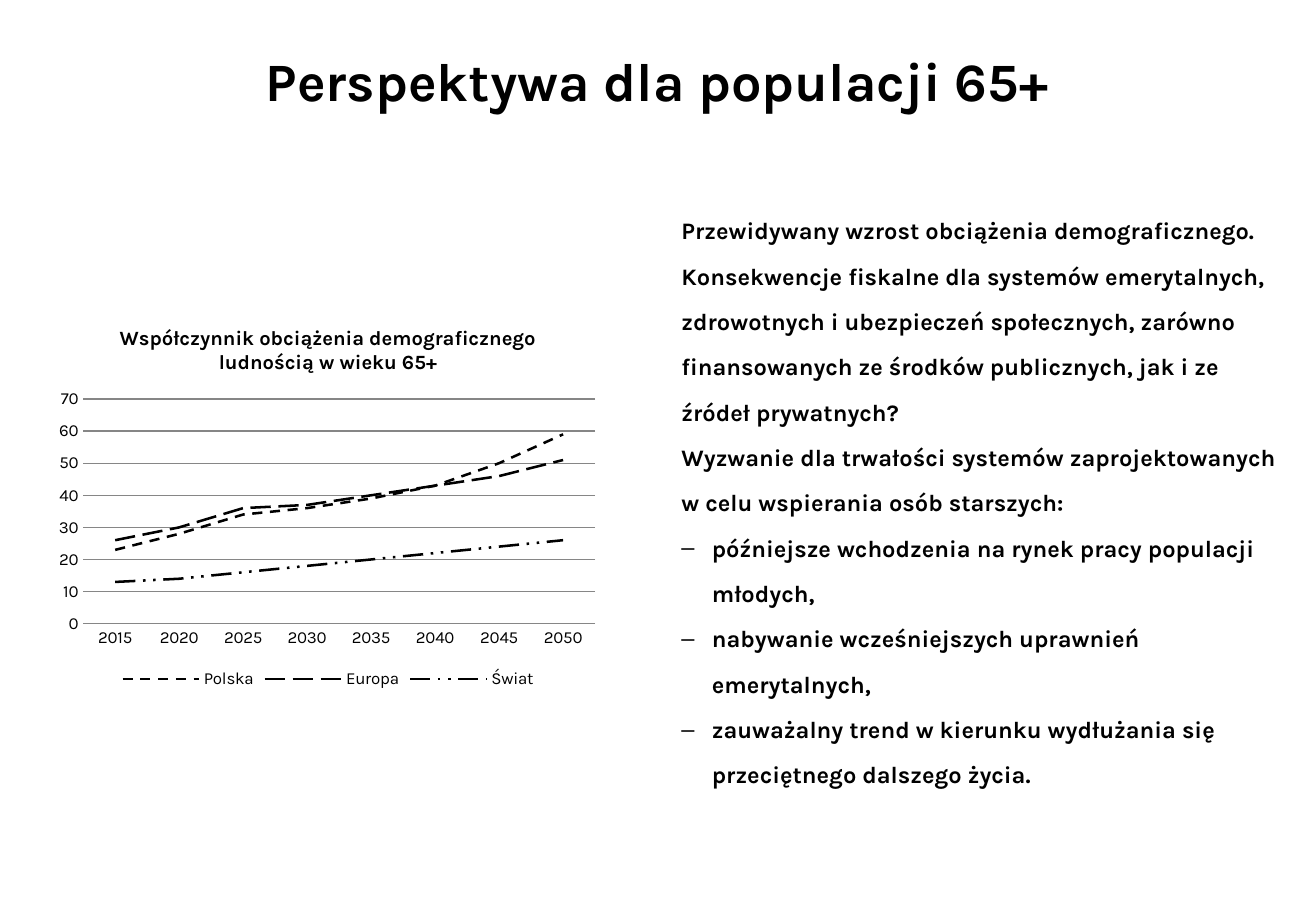
from lxml import etree
from pptx import Presentation
from pptx.chart.data import CategoryChartData
from pptx.dml.color import RGBColor
from pptx.enum.chart import XL_CHART_TYPE, XL_LEGEND_POSITION, XL_TICK_MARK
from pptx.enum.dml import MSO_LINE
from pptx.enum.text import MSO_ANCHOR, PP_ALIGN
from pptx.oxml.ns import qn
from pptx.util import Inches, Pt

LINE_CHART = XL_CHART_TYPE.LINE
LEGEND_BOTTOM = XL_LEGEND_POSITION.BOTTOM
NO_TICK = XL_TICK_MARK.NONE
TOP = MSO_ANCHOR.TOP
LEFT, CENTER = PP_ALIGN.LEFT, PP_ALIGN.CENTER
DASH, LONG_DASH = MSO_LINE.DASH, MSO_LINE.LONG_DASH
DASH_DOT_DOT = MSO_LINE.DASH_DOT_DOT

FONT = "Karla"
BLACK, GRAY = "000000", "868686"

TITLE = "Perspektywa dla populacji 65+"
STATEMENTS = [
    "Przewidywany wzrost obciążenia demograficznego.",
    "Konsekwencje fiskalne dla systemów emerytalnych, zdrowotnych i "
    "ubezpieczeń społecznych, zarówno finansowanych ze środków publicznych, "
    "jak i ze źródeł prywatnych?",
    "Wyzwanie dla trwałości systemów zaprojektowanych w celu wspierania "
    "osób starszych:",
]
CHALLENGES = [
    "późniejsze wchodzenia na rynek pracy populacji młodych,",
    "nabywanie wcześniejszych uprawnień emerytalnych,",
    "zauważalny trend w kierunku wydłużania się przeciętnego dalszego życia.",
]
CHART_TITLE = "Współczynnik obciążenia demograficznego ludnością w wieku 65+"
YEARS = [str(year) for year in range(2015, 2051, 5)]
RATIOS = [
    ("Polska", [23, 28, 34, 36, 39, 43, 50, 59], DASH),
    ("Europa", [26, 30, 36, 37, 40, 43, 46, 51], LONG_DASH),
    ("Świat", [13, 14, 16, 18, 20, 22, 24, 26], DASH_DOT_DOT),
]
PLOT_AREA = {"x": 0.06, "y": 0.24, "w": 0.92, "h": 0.58}


def color(value):
    return RGBColor.from_string(value)


def set_font(font, size, bold=False):
    font.name = FONT
    font.size = Pt(size)
    font.bold = bold
    font.color.rgb = color(BLACK)


def add_bullet(p):
    pPr = p._p.get_or_add_pPr()
    pPr.set("marL", str(Inches(0.25)))
    pPr.set("indent", str(Inches(-0.25)))
    etree.SubElement(pPr, qn("a:buFont")).set("typeface", "Arial")
    etree.SubElement(pPr, qn("a:buChar")).set("char", "–")


def add_text(s, box, paragraphs, size, spacing, align=LEFT):
    """Add a text box from (text, bulleted) pairs."""
    tf = s.shapes.add_textbox(*map(Inches, box)).text_frame
    tf.word_wrap = True
    tf.vertical_anchor = TOP
    for i, (text, bulleted) in enumerate(paragraphs):
        p = tf.add_paragraph() if i else tf.paragraphs[0]
        p.alignment = align
        p.line_spacing = spacing
        if bulleted:
            add_bullet(p)
        r = p.add_run()
        r.text = text
        set_font(r.font, size, bold=True)


def set_plot_layout(chart):
    plot_area = chart._chartSpace.chart.plotArea
    layout = plot_area.find(qn("c:layout"))
    if layout is None:
        layout = etree.Element(qn("c:layout"))
        plot_area.insert(0, layout)
    manual = etree.SubElement(layout, qn("c:manualLayout"))
    settings = {"layoutTarget": "inner", "xMode": "edge", "yMode": "edge", **PLOT_AREA}
    for name, value in settings.items():
        etree.SubElement(manual, qn(f"c:{name}")).set("val", str(value))


def add_line_chart(s, box):
    data = CategoryChartData()
    data.categories = YEARS
    for name, values, _ in RATIOS:
        data.add_series(name, values)
    chart = s.shapes.add_chart(LINE_CHART, *map(Inches, box), data).chart
    set_font(chart.font, 10)
    set_plot_layout(chart)

    # Title and legend
    chart.has_title = True
    r = chart.chart_title.text_frame.paragraphs[0].add_run()
    r.text = CHART_TITLE
    set_font(r.font, 12, bold=True)
    chart.has_legend = True
    chart.legend.position = LEGEND_BOTTOM
    chart.legend.include_in_layout = False

    # Axes
    years, ratio = chart.category_axis, chart.value_axis
    for axis in (years, ratio):
        axis.major_tick_mark = axis.minor_tick_mark = NO_TICK
    ratio.minimum_scale, ratio.maximum_scale, ratio.major_unit = 0, 70, 10
    ratio.format.line.fill.background()
    ratio.has_major_gridlines = True
    for line in (years.format.line, ratio.major_gridlines.format.line):
        line.color.rgb = color(GRAY)
        line.width = Pt(0.75)

    # Series
    plot = chart.plots[0]
    plot.vary_by_categories = False
    for series, (_, _, dash) in zip(plot.series, RATIOS):
        series.smooth = False
        line = series.format.line
        line.color.rgb = color(BLACK)
        line.width = Pt(1.5)
        line.dash_style = dash


def main():
    prs = Presentation()
    prs.slide_width, prs.slide_height = Inches(10.83), Inches(7.5)
    s = prs.slides.add_slide(prs.slide_layouts[6])

    # Heading
    add_text(s, (0.74, 0.4, 9.34, 1.02), [(TITLE, False)], 32, 0.9, CENTER)

    # Statements and bulleted challenges
    body = [(text, False) for text in STATEMENTS]
    body += [(text, True) for text in CHALLENGES]
    add_text(s, (5.51, 1.59, 5.16, 4.9), body, 14, 1.6)

    # Dependency ratio chart
    add_line_chart(s, (0.41, 2.52, 4.58, 3.19))
    prs.save("out.pptx")


if __name__ == "__main__":
    main()
